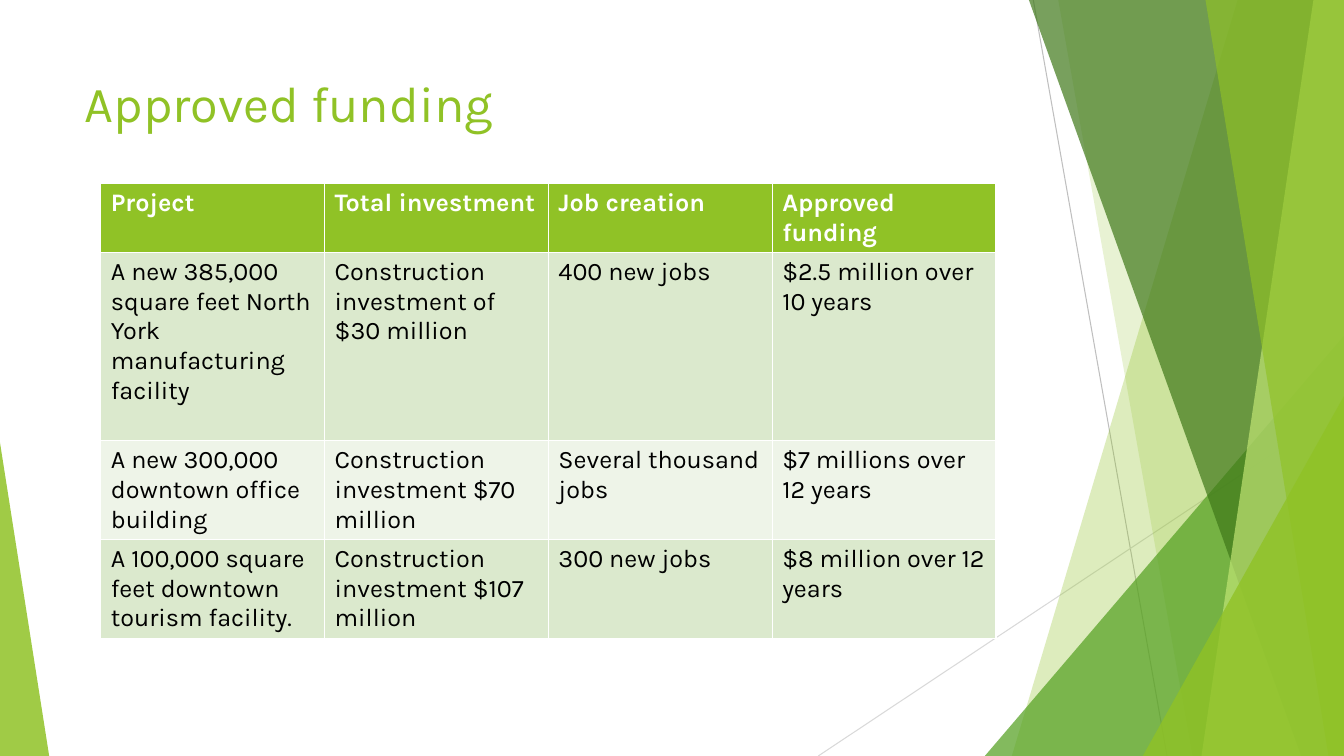
import pptx
import pptx.util
import pptx.dml.color
import pptx.enum.shapes
import pptx.enum.text
import pptx.oxml.ns
from lxml import etree

Cm = pptx.util.Cm
Pt = pptx.util.Pt
RGBColor = pptx.dml.color.RGBColor

FONT = "Karla"
WIDTH, HEIGHT = 33.87, 19.05

WHITE = RGBColor(0xFF, 0xFF, 0xFF)
BLACK = RGBColor(0x00, 0x00, 0x00)
LIME = RGBColor(0x90, 0xC2, 0x26)
PALE_LIME = RGBColor(0xC0, 0xE4, 0x74)
GREEN = RGBColor(0x54, 0xA0, 0x21)
DARK_GREEN = RGBColor(0x3F, 0x78, 0x19)
GREY = RGBColor(0xBF, 0xBF, 0xBF)
LIGHT_GREY = RGBColor(0xD9, 0xD9, 0xD9)
BAND_DARK = RGBColor(0xDB, 0xE9, 0xCD)
BAND_LIGHT = RGBColor(0xEE, 0xF4, 0xE8)

FUNDING = [
    ("Project", "Total investment", "Job creation", "Approved funding"),
    ("A new 385,000 square feet North York manufacturing facility",
     "Construction investment of $30 million",
     "400 new jobs", "$2.5 million over 10 years"),
    ("A new 300,000 downtown office building",
     "Construction investment $70 million",
     "Several thousand jobs", "$7 millions over 12 years"),
    ("A 100,000 square feet downtown tourism facility.",
     "Construction investment $107 million",
     "300 new jobs", "$8 million over 12 years"),
]
ROW_HEIGHTS = (1.74, 4.74, 2.49, 2.49)
COLUMN_WIDTH = 5.64


def fill_translucent(shape, color, opacity):
    """Fill without outline or shadow; opacity is a percentage."""
    shape.shadow.inherit = False
    shape.line.fill.background()
    shape.fill.solid()
    shape.fill.fore_color.rgb = color
    color_element = shape.fill._xPr.find(".//" + pptx.oxml.ns.qn("a:srgbClr"))
    alpha = etree.SubElement(color_element, pptx.oxml.ns.qn("a:alpha"))
    alpha.set("val", str(opacity * 1000))


def add_thin_line(slide, start, end, color):
    line = slide.shapes.add_connector(
        pptx.enum.shapes.MSO_CONNECTOR.STRAIGHT,
        Cm(start[0]), Cm(start[1]), Cm(end[0]), Cm(end[1]))
    line.line.color.rgb = color
    line.line.width = Pt(0.75)
    etree.SubElement(line._element.spPr, pptx.oxml.ns.qn("a:effectLst"))


def add_right_band(slide, top_x, bottom_x, color, opacity):
    """Full-height band from a slanted left edge to the slide's right edge."""
    builder = slide.shapes.build_freeform(Cm(top_x), 0)
    builder.add_line_segments([
        (Cm(WIDTH), 0), (Cm(WIDTH), Cm(HEIGHT)), (Cm(bottom_x), Cm(HEIGHT))])
    fill_translucent(builder.convert_to_shape(), color, opacity)


def add_corner_triangle(slide, left, right, top, apex, color, opacity):
    """Triangle standing on the bottom edge; apex 0 is left, 1 is right."""
    triangle = slide.shapes.add_shape(
        pptx.enum.shapes.MSO_SHAPE.ISOSCELES_TRIANGLE,
        Cm(left), Cm(top), Cm(right - left), Cm(HEIGHT - top))
    triangle.adjustments[0] = apex
    fill_translucent(triangle, color, opacity)


def add_facets(slide):
    add_thin_line(slide, (26.04, 0), (29.41, HEIGHT), GREY)
    add_thin_line(slide, (WIDTH, 10.24), (20.62, HEIGHT), LIGHT_GREY)
    add_right_band(slide, 31.19, 25.5, LIME, 30)
    add_right_band(slide, 26.67, 30.05, LIME, 20)
    add_corner_triangle(slide, 24.82, WIDTH, 8.46, 1, GREEN, 72)
    add_right_band(slide, 25.93, 32.79, DARK_GREEN, 70)
    add_right_band(slide, 33.1, 30.28, PALE_LIME, 70)
    add_right_band(slide, 30.38, 33.48, LIME, 65)
    add_corner_triangle(slide, 28.8, WIDTH, 9.98, 1, LIME, 80)
    add_corner_triangle(slide, 0, 1.24, 11.15, 0, LIME, 85)


def format_text(paragraph, size, color, bold=False):
    paragraph.font.name = FONT
    paragraph.font.size = Pt(size)
    paragraph.font.color.rgb = color
    paragraph.font.bold = bold


def set_title(slide, text):
    title = slide.shapes.title
    title.left, title.top = Cm(1.88), Cm(1.7)
    title.width, title.height = Cm(23.88), Cm(3.66)
    title.text_frame.text = text
    title.text_frame.vertical_anchor = pptx.enum.text.MSO_ANCHOR.TOP
    paragraph = title.text_frame.paragraphs[0]
    paragraph.alignment = pptx.enum.text.PP_ALIGN.LEFT
    format_text(paragraph, 36, LIME)


def add_funding_table(slide):
    columns = len(FUNDING[0])
    table = slide.shapes.add_table(
        len(FUNDING), columns, Cm(2.54), Cm(4.62),
        Cm(COLUMN_WIDTH * columns), Cm(sum(ROW_HEIGHTS))).table
    for column in table.columns:
        column.width = Cm(COLUMN_WIDTH)
    for row_index, texts in enumerate(FUNDING):
        table.rows[row_index].height = Cm(ROW_HEIGHTS[row_index])
        header = row_index == 0
        band = BAND_DARK if row_index % 2 else BAND_LIGHT
        for column_index, text in enumerate(texts):
            cell = table.cell(row_index, column_index)
            cell.text = text
            cell.fill.solid()
            cell.fill.fore_color.rgb = LIME if header else band
            format_text(cell.text_frame.paragraphs[0], 18,
                        WHITE if header else BLACK, header)


def main():
    presentation = pptx.Presentation()
    presentation.slide_width = Cm(WIDTH)
    presentation.slide_height = Cm(HEIGHT)
    slide = presentation.slides.add_slide(presentation.slide_layouts[5])
    add_facets(slide)
    set_title(slide, "Approved funding")
    add_funding_table(slide)
    presentation.save("out.pptx")


if __name__ == "__main__":
    main()
